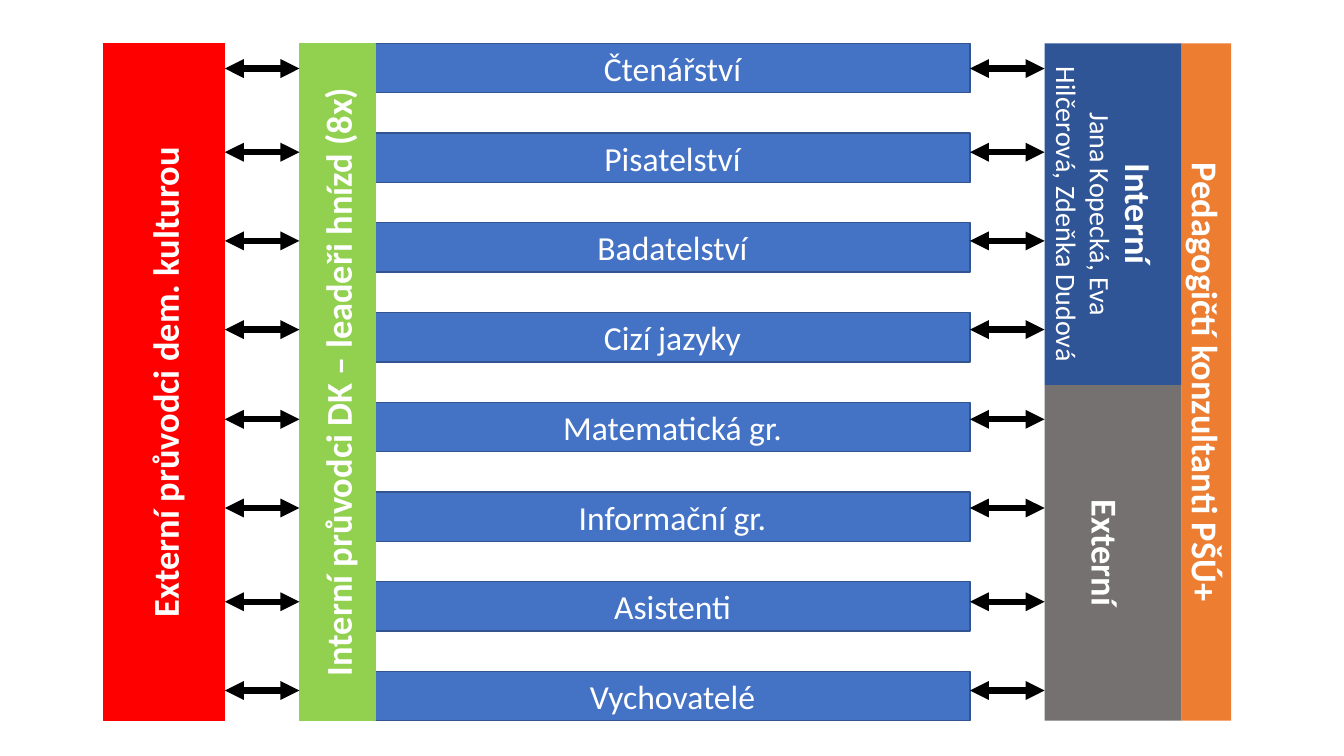
import itertools
from dataclasses import dataclass

import lxml.etree
import pptx
import pptx.dml.color
import pptx.enum.shapes
import pptx.enum.text
import pptx.oxml.ns
import pptx.util

RGBColor = pptx.dml.color.RGBColor
Inches = pptx.util.Inches

WHITE = RGBColor(0xFF, 0xFF, 0xFF)
BLACK = RGBColor(0x00, 0x00, 0x00)
BLUE = RGBColor(0x44, 0x72, 0xC4)
BLUE_EDGE = RGBColor(0x32, 0x54, 0x91)
NAVY = RGBColor(0x2F, 0x55, 0x97)
RED = RGBColor(0xFF, 0x00, 0x00)
GREEN = RGBColor(0x92, 0xD0, 0x50)
GREY = RGBColor(0x76, 0x71, 0x71)
ORANGE = RGBColor(0xED, 0x7D, 0x31)

# Column edges (inches): external guides, gap, internal guides, nests, gap, consultants
EXTERNAL, LEFT_GAP, INTERNAL, NESTS, RIGHT_GAP, TEAM, CONSULTANTS, END = (
    1.03, 2.23, 2.97, 3.72, 9.62, 10.36, 11.72, 12.21)

# Rows (inches)
TOP, MIDDLE, BOTTOM = 0.43, 3.82, 7.15
NEST_HEIGHT = 0.49
NEST_STEP = (BOTTOM - TOP - NEST_HEIGHT) / 7

UPWARD, DOWNWARD = 270, 90


@dataclass(frozen=True)
class Line:
    text: str
    size: int = 26
    bold: bool = True


@dataclass(frozen=True)
class Box:
    left: float
    top: float
    right: float
    bottom: float
    fill: RGBColor
    lines: tuple[Line, ...]
    rotation: int = 0
    edge: RGBColor | None = None
    lowered: bool = False


@dataclass(frozen=True)
class Nest:
    name: str
    arrow_y: float


NEST_ROWS = (
    Nest("Čtenářství", 0.68),
    Nest("Pisatelství", 1.51),
    Nest("Badatelství", 2.39),
    Nest("Cizí jazyky", 3.27),
    Nest("Matematická gr.", 4.16),
    Nest("Informační gr.", 5.04),
    Nest("Asistenti", 5.97),
    Nest("Vychovatelé", 6.85),
)

GUIDES = (
    Box(EXTERNAL, TOP, LEFT_GAP, BOTTOM, RED,
        (Line("Externí průvodci dem. kulturou"),), UPWARD, RED),
    Box(INTERNAL, TOP, NESTS, BOTTOM, GREEN,
        (Line("Interní průvodci DK – leadeři hnízd (8x)"),), UPWARD, GREEN),
)

CONSULTANT_TEAMS = (
    Box(TEAM, TOP, CONSULTANTS, MIDDLE, NAVY,
        (Line("Interní"),
         Line("Jana Kopecká, Eva Hilčerová, Zdeňka Dudová", 20, False)),
        DOWNWARD, lowered=True),
    Box(TEAM, MIDDLE, CONSULTANTS, BOTTOM, GREY,
        (Line("Externí"),), DOWNWARD, lowered=True),
    Box(CONSULTANTS, TOP, END, BOTTOM, ORANGE,
        (Line("Pedagogičtí konzultanti PŠÚ+"),), DOWNWARD),
)


def nest_box(row: int, nest: Nest) -> Box:
    top = TOP + row * NEST_STEP
    return Box(NESTS, top, RIGHT_GAP, top + NEST_HEIGHT, BLUE,
               (Line(nest.name, 24, False),), edge=BLUE_EDGE)


def draw_box(slide: pptx.slide.Slide, box: Box) -> None:
    """Draw a box over its visible area, swapping its sides when it is turned."""
    width, height = box.right - box.left, box.bottom - box.top
    if box.rotation:
        width, height = height, width
    left = (box.left + box.right - width) / 2
    top = (box.top + box.bottom - height) / 2
    panel = slide.shapes.add_shape(
        pptx.enum.shapes.MSO_SHAPE.RECTANGLE,
        Inches(left), Inches(top), Inches(width), Inches(height))
    panel.rotation = box.rotation
    panel.shadow.inherit = False
    panel.fill.solid()
    panel.fill.fore_color.rgb = box.fill
    if box.edge is None:
        panel.line.fill.background()
    else:
        panel.line.color.rgb = box.edge
        panel.line.width = pptx.util.Pt(1)

    frame = panel.text_frame
    frame.word_wrap = True
    frame.vertical_anchor = pptx.enum.text.MSO_ANCHOR.MIDDLE
    if box.lowered:
        frame.margin_top, frame.margin_bottom = Inches(0.14), 0
    frame.text = "\n".join(line.text for line in box.lines)
    for paragraph, line in zip(frame.paragraphs, box.lines):
        paragraph.alignment = pptx.enum.text.PP_ALIGN.CENTER
        font = paragraph.runs[0].font
        font.name = "Calibri"
        font.size = pptx.util.Pt(line.size)
        font.bold = line.bold
        font.color.rgb = WHITE


def draw_arrow(slide: pptx.slide.Slide, left: float, right: float, y: float) -> None:
    """Draw a two-headed horizontal arrow."""
    arrow = slide.shapes.add_connector(
        pptx.enum.shapes.MSO_CONNECTOR.STRAIGHT,
        Inches(right), Inches(y), Inches(left), Inches(y))
    arrow.line.color.rgb = BLACK
    arrow.line.width = pptx.util.Pt(4.5)
    outline = arrow.line._get_or_add_ln()
    for end in ("a:headEnd", "a:tailEnd"):
        lxml.etree.SubElement(outline, pptx.oxml.ns.qn(end), type="triangle")
    lxml.etree.SubElement(arrow._element.spPr, pptx.oxml.ns.qn("a:effectLst"))


def main() -> None:
    deck = pptx.Presentation()
    deck.slide_width, deck.slide_height = Inches(13.33), Inches(7.5)
    slide = deck.slides.add_slide(deck.slide_layouts[6])

    # Nests, guides and consultants
    nests = itertools.starmap(nest_box, enumerate(NEST_ROWS))
    for box in itertools.chain(nests, GUIDES, CONSULTANT_TEAMS):
        draw_box(slide, box)

    # Arrows across both gaps
    gaps = ((LEFT_GAP, INTERNAL), (RIGHT_GAP, TEAM))
    for (left, right), nest in itertools.product(gaps, NEST_ROWS):
        draw_arrow(slide, left, right, nest.arrow_y)

    deck.save("out.pptx")


if __name__ == "__main__":
    main()
